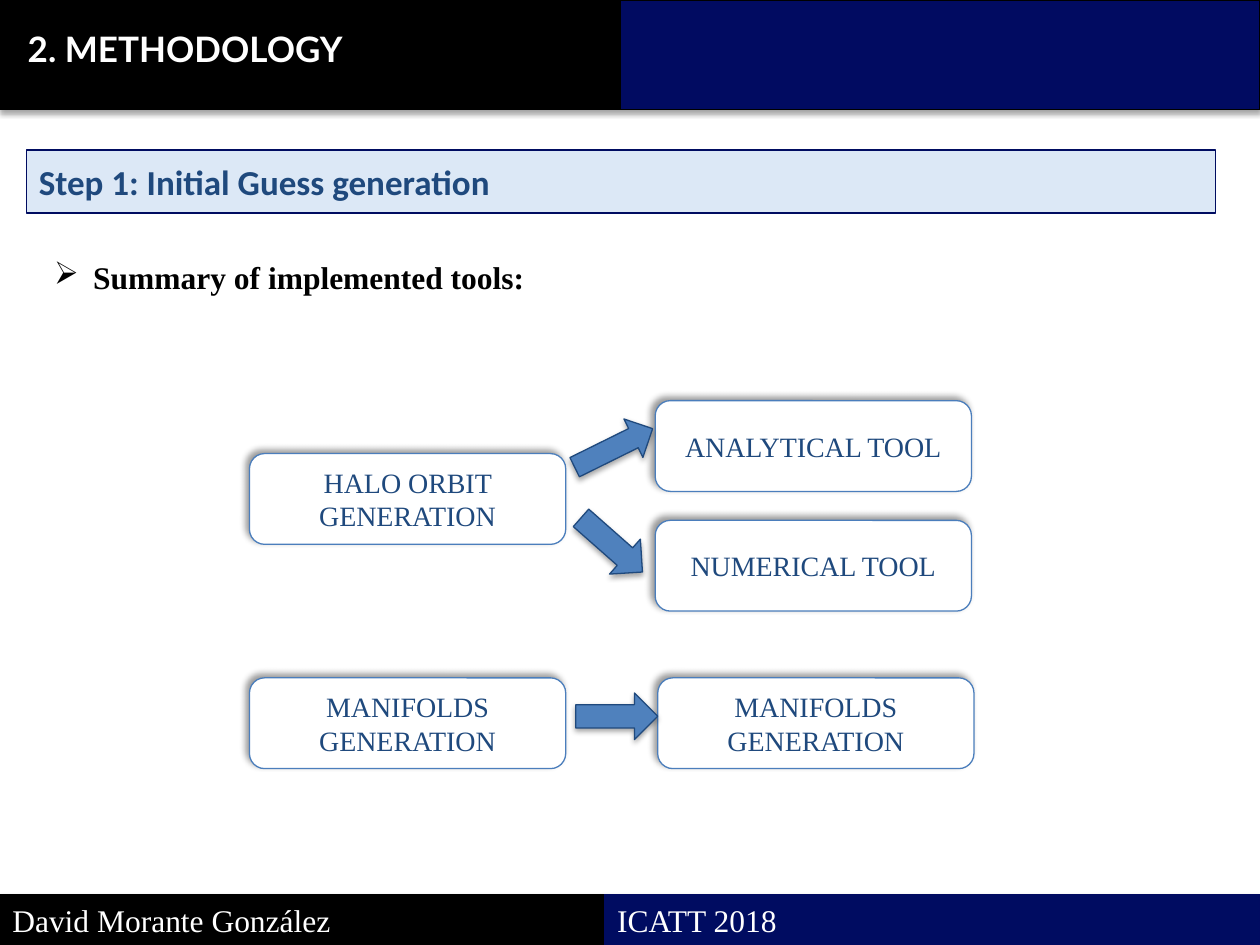
from lxml import etree
from pptx import Presentation
from pptx.dml.color import RGBColor
from pptx.enum import shapes, text
from pptx.oxml import ns
from pptx.util import Inches, Pt

BLACK = RGBColor(0x00, 0x00, 0x00)
WHITE = RGBColor(0xFF, 0xFF, 0xFF)
NAVY = RGBColor(0x01, 0x0B, 0x61)
FOOTER_NAVY = RGBColor(0x00, 0x0C, 0x61)
PALE_BLUE = RGBColor(0xC6, 0xD9, 0xF1)
DARK_BLUE = RGBColor(0x1F, 0x49, 0x7D)
ARROW_BLUE = RGBColor(0x4F, 0x81, 0xBD)
EDGE_BLUE = RGBColor(0x4B, 0x7E, 0xBC)

SERIF = "Times New Roman"
RECT = shapes.MSO_SHAPE.RECTANGLE
MIDDLE = text.MSO_ANCHOR.MIDDLE
TOP = text.MSO_ANCHOR.TOP
LEFT = text.PP_ALIGN.LEFT
CENTER = text.PP_ALIGN.CENTER

# Shadows: opacity %, blur pt, distance pt, direction in degrees
DROP_SHADOW = (35, 3.15, 1.81, 90)
CORNER_SHADOW = (40, 4, 3, 225)

FOOTER_FONT = dict(name=SERIF, size=Pt(18), color=WHITE)
TOOL_FONT = dict(name=SERIF, size=Pt(16), color=DARK_BLUE)
STEP_FONT = dict(name="Calibri", size=Pt(20), bold=True, color=DARK_BLUE)
TITLE_FONT = dict(name="Lato", size=Pt(20), bold=True, color=WHITE)
SUMMARY_FONT = dict(name=SERIF, size=Pt(18), bold=True, color=BLACK)

TOOL_SIZE = (2.51, 0.72)
TOOLS = [
    (1.98, 3.6, "HALO ORBIT GENERATION"),
    (5.2, 3.18, "ANALYTICAL TOOL"),
    (5.2, 4.13, "NUMERICAL TOOL"),
    (1.98, 5.38, "MANIFOLDS GENERATION"),
    (5.22, 5.38, "MANIFOLDS GENERATION"),
]
ARROWS = [
    ((4.7, 3.21, 0.34, 0.69), 243.7),
    ((4.67, 4, 0.37, 0.65), 311.4),
    ((4.71, 5.36, 0.37, 0.65), 270),
]


def add_element(parent, tag, **attributes):
    values = {key: str(value) for key, value in attributes.items()}
    return etree.SubElement(parent, ns.qn(tag), values)


def set_shadow(shape, shadow):
    shape.shadow.inherit = False
    if shadow is None:
        return
    opacity, blur, distance, direction = shadow
    effects = shape._element.spPr.find(ns.qn("a:effectLst"))
    outer = add_element(effects, "a:outerShdw", blurRad=Pt(blur), dist=Pt(distance),
                        dir=direction * 60000, rotWithShape=0)
    color = add_element(outer, "a:srgbClr", val=BLACK)
    add_element(color, "a:alpha", val=opacity * 1000)


def set_opacity(shape, percent):
    color = shape._element.spPr.find(ns.qn("a:solidFill"))[0]
    add_element(color, "a:alpha", val=percent * 1000)


def write_text(shape, words, font, align=LEFT, anchor=MIDDLE):
    frame = shape.text_frame
    frame.word_wrap = True
    frame.auto_size = text.MSO_AUTO_SIZE.NONE
    frame.vertical_anchor = anchor
    para = frame.paragraphs[0]
    para.alignment = align
    span = para.add_run()
    span.text = words
    for key, value in font.items():
        if key == "color":
            span.font.color.rgb = value
        else:
            setattr(span.font, key, value)
    return para


def add_block(page, kind, place, fill, line, shadow=None):
    block = page.shapes.add_shape(kind, *map(Inches, place))
    block.fill.solid()
    block.fill.fore_color.rgb = fill
    block.line.color.rgb = line
    block.line.width = Pt(0.75)
    set_shadow(block, shadow)
    return block


def place_placeholder(shape, place):
    for name, value in zip(("left", "top", "width", "height"), place):
        setattr(shape, name, Inches(value))


def add_bands(page):
    add_block(page, RECT, (0, 0, 10, 0.87), NAVY, BLACK, DROP_SHADOW)
    add_block(page, RECT, (0, 0, 4.92, 0.87), BLACK, BLACK)
    author = add_block(page, RECT, (0, 7.1, 4.8, 0.4), BLACK, BLACK, DROP_SHADOW)
    write_text(author, "David Morante González", FOOTER_FONT)
    event = add_block(page, RECT, (4.8, 7.1, 5.2, 0.4), FOOTER_NAVY, NAVY, DROP_SHADOW)
    write_text(event, "ICATT 2018", FOOTER_FONT)


def add_title(page, words):
    title = page.shapes.title
    place_placeholder(title, (0, 0, 4.11, 0.55))
    frame = title.text_frame
    frame.margin_left = frame.margin_top = Inches(0.22)
    frame.margin_bottom = 0
    write_text(title, words, TITLE_FONT, anchor=TOP)
    page.shapes._spTree.append(title._element)  # in front of the header band


def add_summary(page, words):
    body = page.placeholders[1]
    place_placeholder(body, (0.33, 1.85, 7.4, 0.53))
    para = write_text(body, words, SUMMARY_FONT, anchor=TOP)
    settings = para._p.get_or_add_pPr()
    settings.set("marL", str(Inches(0.31)))
    settings.set("indent", str(-Inches(0.31)))
    add_element(settings, "a:buFont", typeface="Wingdings")
    add_element(settings, "a:buChar", char="Ø")
    para.line_spacing = 1.5
    para.space_before = Pt(0)


def add_step(page, words):
    step = add_block(page, RECT, (0.21, 1.19, 9.44, 0.5), PALE_BLUE, FOOTER_NAVY)
    set_opacity(step, 60)
    write_text(step, words, STEP_FONT)


def add_tool(page, left, top, words):
    tool = add_block(page, shapes.MSO_SHAPE.ROUNDED_RECTANGLE, (left, top, *TOOL_SIZE),
                     WHITE, EDGE_BLUE, CORNER_SHADOW)
    write_text(tool, words, TOOL_FONT, CENTER)


def add_arrow(page, place, rotation):
    arrow = add_block(page, shapes.MSO_SHAPE.DOWN_ARROW, place,
                      ARROW_BLUE, DARK_BLUE, DROP_SHADOW)
    arrow.rotation = rotation


def main():
    deck = Presentation()
    deck.slide_width, deck.slide_height = Inches(10), Inches(7.5)
    page = deck.slides.add_slide(deck.slide_layouts[1])
    add_bands(page)
    add_step(page, "Step 1: Initial Guess generation")
    add_summary(page, "Summary of implemented tools:")
    for tool in TOOLS:
        add_tool(page, *tool)
    for arrow in ARROWS:
        add_arrow(page, *arrow)
    add_title(page, "2. METHODOLOGY")
    deck.save("out.pptx")


if __name__ == "__main__":
    main()
